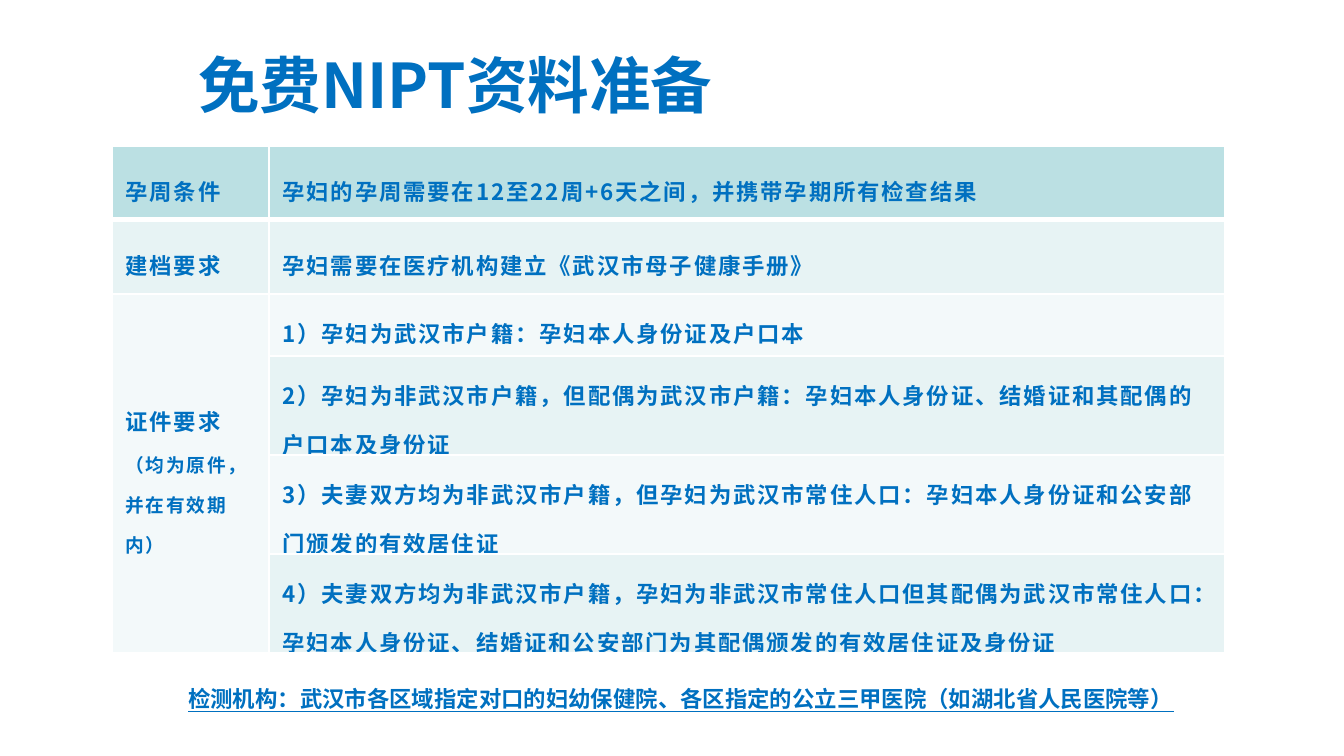
from dataclasses import dataclass

from lxml import etree
from pptx import Presentation
from pptx.dml.color import RGBColor
from pptx.enum.text import MSO_ANCHOR, PP_ALIGN
from pptx.oxml.ns import qn
from pptx.util import Emu, Pt

MIDDLE = MSO_ANCHOR.MIDDLE
TOP = MSO_ANCHOR.TOP
LEFT = PP_ALIGN.LEFT

PIXEL = 914400 / 134.4
FONT = "Noto Sans CJK SC"
COLORS = {
    "text": "0070C0",
    "border": "FFFFFF",
    "header": "BBE0E3",
    "dark": "E7F3F4",
    "light": "F3F9FA",
}


@dataclass(frozen=True)
class Piece:
    text: str
    size: int = 12
    spacing: int = 0
    underline: bool = False


@dataclass(frozen=True)
class Label:
    box: tuple[int, int, int, int]
    piece: Piece
    anchor: MSO_ANCHOR
    line_spacing: float


@dataclass(frozen=True)
class Row:
    height: int
    fill: str
    heading: tuple[Piece, ...]
    requirement: str


LABELS = (
    Label((185, 20, 895, 127), Piece("免费NIPT资料准备", 33), MIDDLE, 1.0),
    Label(
        (175, 652, 1038, 55),
        Piece(
            "检测机构：武汉市各区域指定对口的妇幼保健院、各区指定的公立三甲医院（如湖北省人民医院等）",
            underline=True,
        ),
        TOP,
        2.0,
    ),
)

TABLE_LEFT, TABLE_TOP = 112, 146
COLUMN_WIDTHS = (157, 956)
MERGE_START = 2
ROWS = (
    Row(74, "header", (Piece("孕周条件", spacing=1),), "孕妇的孕周需要在12至22周+6天之间，并携带孕期所有检查结果"),
    Row(74, "dark", (Piece("建档要求", spacing=1),), "孕妇需要在医疗机构建立《武汉市母子健康手册》"),
    Row(
        62,
        "light",
        (Piece("证件要求", spacing=1), Piece("（均为原件，并在有效期内）", 10, 1)),
        "1）孕妇为武汉市户籍：孕妇本人身份证及户口本",
    ),
    Row(99, "dark", (), "2）孕妇为非武汉市户籍，但配偶为武汉市户籍：孕妇本人身份证、结婚证和其配偶的户口本及身份证"),
    Row(99, "light", (), "3）夫妻双方均为非武汉市户籍，但孕妇为武汉市常住人口：孕妇本人身份证和公安部门颁发的有效居住证"),
    Row(
        99,
        "dark",
        (),
        "4）夫妻双方均为非武汉市户籍，孕妇为非武汉市常住人口但其配偶为武汉市常住人口："
        "孕妇本人身份证、结婚证和公安部门为其配偶颁发的有效居住证及身份证",
    ),
)


def px(length: int) -> Emu:
    return Emu(round(length * PIXEL))


def color(name: str) -> RGBColor:
    return RGBColor.from_string(COLORS[name])


def set_format(target, values: dict) -> None:
    for name, value in values.items():
        setattr(target, name, value)


def write_pieces(text_frame, pieces: tuple[Piece, ...], line_spacing: float) -> None:
    paragraph = text_frame.paragraphs[0]
    set_format(paragraph, {"alignment": LEFT, "line_spacing": line_spacing})
    for piece in pieces:
        run = paragraph.add_run()
        run.text = piece.text
        set_format(
            run.font,
            {"name": FONT, "size": Pt(piece.size), "bold": True, "underline": piece.underline},
        )
        run.font.color.rgb = color("text")
        properties = run._r.get_or_add_rPr()
        properties.set("spc", str(piece.spacing * 100))
        east_asian = etree.Element(qn("a:ea"), typeface=FONT)
        properties.find(qn("a:latin")).addnext(east_asian)


def draw_label(slide, label: Label) -> None:
    shape = slide.shapes.add_textbox(*map(px, label.box))
    set_format(shape.text_frame, {"word_wrap": True, "vertical_anchor": label.anchor})
    write_pieces(shape.text_frame, (label.piece,), label.line_spacing)


def style_cell(cell, fill: str, bottom_width: int) -> None:
    properties = cell._tc.get_or_add_tcPr()
    for side, width in {"L": 1, "R": 1, "T": 1, "B": bottom_width}.items():
        line = etree.SubElement(properties, qn(f"a:ln{side}"), w=str(Pt(width)))
        solid = etree.SubElement(line, qn("a:solidFill"))
        etree.SubElement(solid, qn("a:srgbClr"), val=COLORS["border"])
    cell.fill.solid()
    cell.fill.fore_color.rgb = color(fill)
    cell.vertical_anchor = MIDDLE


def draw_table(slide) -> None:
    height = sum(row.height for row in ROWS)
    box = (TABLE_LEFT, TABLE_TOP, sum(COLUMN_WIDTHS), height)
    table = slide.shapes.add_table(len(ROWS), len(COLUMN_WIDTHS), *map(px, box)).table
    for column, width in zip(table.columns, COLUMN_WIDTHS):
        column.width = px(width)
    for index, row in enumerate(ROWS):
        table.rows[index].height = px(row.height)
        contents = (row.heading, (Piece(row.requirement, spacing=1),))
        for column_index, pieces in enumerate(contents):
            cell = table.cell(index, column_index)
            style_cell(cell, row.fill, 3 if index == 0 else 1)
            write_pieces(cell.text_frame, pieces, 1.5)
    table.cell(MERGE_START, 0).merge(table.cell(len(ROWS) - 1, 0))


def main() -> None:
    presentation = Presentation()
    set_format(presentation, {"slide_width": px(1344), "slide_height": px(756)})
    slide = presentation.slides.add_slide(presentation.slide_layouts[6])
    title, institutions = LABELS
    draw_label(slide, title)
    draw_table(slide)
    draw_label(slide, institutions)
    presentation.save("out.pptx")


if __name__ == "__main__":
    main()
